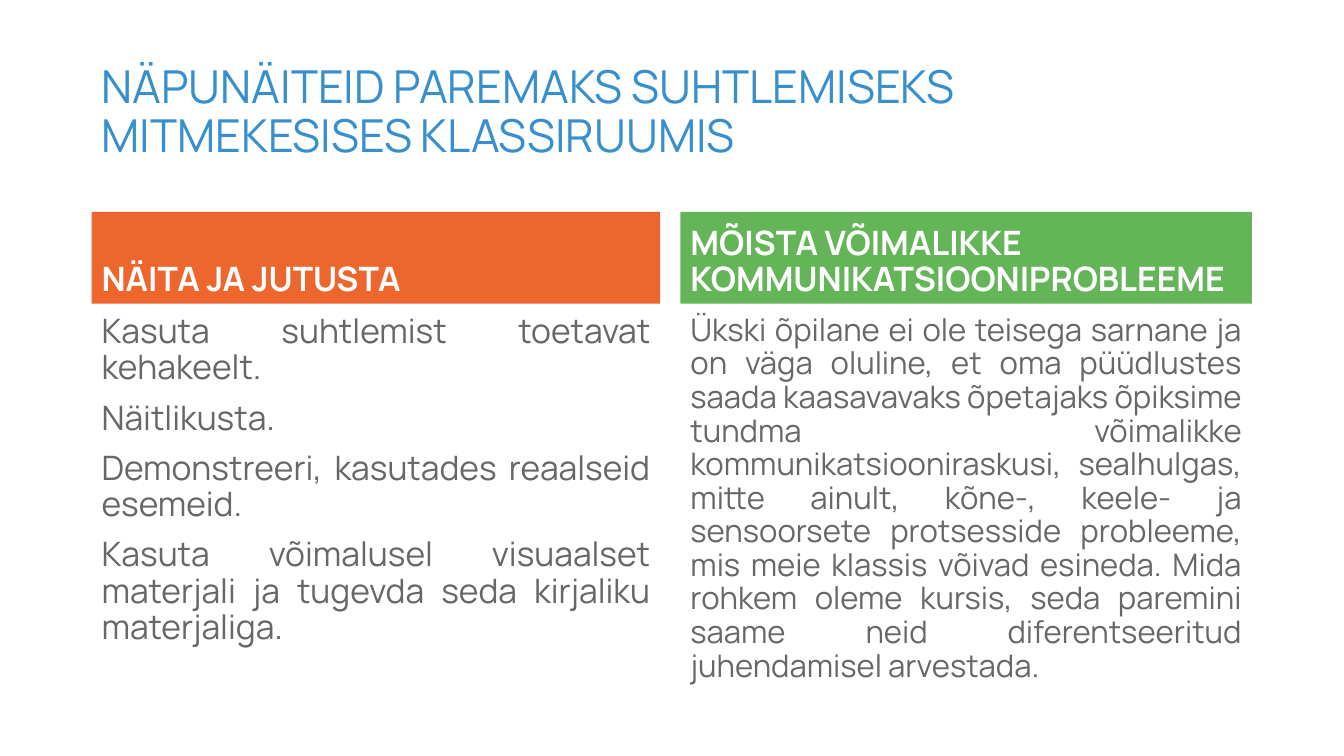
from pptx import Presentation
from pptx.dml.color import RGBColor
from pptx.enum.shapes import MSO_SHAPE
from pptx.enum.text import MSO_ANCHOR, MSO_AUTO_SIZE, PP_ALIGN
from pptx.util import Cm, Pt

BLUE = RGBColor(0x37, 0x8F, 0xCD)
ORANGE = RGBColor(0xEC, 0x66, 0x2D)
GREEN = RGBColor(0x64, 0xB5, 0x58)
GREY = RGBColor(0x67, 0x67, 0x66)
WHITE = RGBColor(0xFF, 0xFF, 0xFF)
RECTANGLE = MSO_SHAPE.RECTANGLE
TOP, MIDDLE, BOTTOM = MSO_ANCHOR.TOP, MSO_ANCHOR.MIDDLE, MSO_ANCHOR.BOTTOM
LEFT, JUSTIFY = PP_ALIGN.LEFT, PP_ALIGN.JUSTIFY
NO_AUTOFIT = MSO_AUTO_SIZE.NONE

TITLE = "NÄPUNÄITEID PAREMAKS SUHTLEMISEKS MITMEKESISES KLASSIRUUMIS"
TITLE_BOX = (2.31, 1.02, 23.77, 3.68)
HEADER_HEIGHT = 2.31
HEADER_GAP = 0.15
COLUMNS = [
    {
        "box": (2.31, 5.34, 14.33, 12.7),
        "color": ORANGE,
        "size": 24,
        "heading": "NÄITA JA JUTUSTA",
        "paragraphs": [
            "Kasuta suhtlemist toetavat kehakeelt.",
            "Näitlikusta.",
            "Demonstreeri, kasutades reaalseid esemeid.",
            "Kasuta võimalusel visuaalset materjali ja tugevda seda "
            "kirjaliku materjaliga.",
        ],
    },
    {
        "box": (17.15, 5.34, 14.4, 12.7),
        "color": GREEN,
        "size": 22.2,
        "heading": "MÕISTA VÕIMALIKKE KOMMUNIKATSIOONIPROBLEEME",
        "paragraphs": [
            "Ükski õpilane ei ole teisega sarnane ja on väga oluline, et oma "
            "püüdlustes saada kaasavavaks õpetajaks õpiksime tundma võimalikke "
            "kommunikatsiooniraskusi, sealhulgas, mitte ainult, kõne-, keele- ja "
            "sensoorsete protsesside probleeme, mis meie klassis võivad esineda. "
            "Mida rohkem oleme kursis, seda paremini saame neid "
            "diferentseeritud juhendamisel arvestada.",
        ],
    },
]


def set_attributes(target, values):
    """Set each named value on the target."""
    for name, value in values.items():
        setattr(target, name, value)


def write_text(shape, texts, anchor, alignment, font):
    """Fill a shape with formatted paragraphs."""
    frame = shape.text_frame
    set_attributes(frame, {"word_wrap": True, "auto_size": NO_AUTOFIT,
                           "vertical_anchor": anchor})
    for index, text in enumerate(texts):
        paragraph = frame.add_paragraph() if index else frame.paragraphs[0]
        paragraph.text = text
        set_attributes(paragraph, {"alignment": alignment, "line_spacing": 0.9,
                                   "space_before": Pt(10 if index else 0)})
        set_attributes(paragraph.font, {"name": "Manrope", "size": Pt(font["size"]),
                                        "bold": font.get("bold", False)})
        paragraph.font.color.rgb = font["color"]


def add_title(slide, box):
    """Place and format the title placeholder."""
    title = slide.shapes.title
    names = ("left", "top", "width", "height")
    set_attributes(title, dict(zip(names, map(Cm, box))))
    write_text(title, [TITLE], MIDDLE, LEFT, {"size": 32.4, "color": BLUE})


def add_column(slide, box, column):
    """Place a coloured heading with its body text below."""
    left, top, width, height = box
    header = slide.shapes.add_shape(
        RECTANGLE, Cm(left), Cm(top), Cm(width), Cm(HEADER_HEIGHT))
    header.shadow.inherit = False
    header.fill.solid()
    header.fill.fore_color.rgb = column["color"]
    header.line.fill.background()
    write_text(header, [column["heading"]], BOTTOM, LEFT,
               {"size": 24, "bold": True, "color": WHITE})

    offset = HEADER_HEIGHT + HEADER_GAP
    body = slide.shapes.add_textbox(
        Cm(left), Cm(top + offset), Cm(width), Cm(height - offset))
    write_text(body, column["paragraphs"], TOP, JUSTIFY,
               {"size": column["size"], "color": GREY})


def main():
    """Build the slide and save it."""
    presentation = Presentation()
    presentation.slide_width = Cm(33.87)
    presentation.slide_height = Cm(19.05)
    slide = presentation.slides.add_slide(presentation.slide_layouts[5])
    add_title(slide, TITLE_BOX)
    for column in COLUMNS:
        add_column(slide, column["box"], column)
    presentation.save("out.pptx")


if __name__ == "__main__":
    main()
